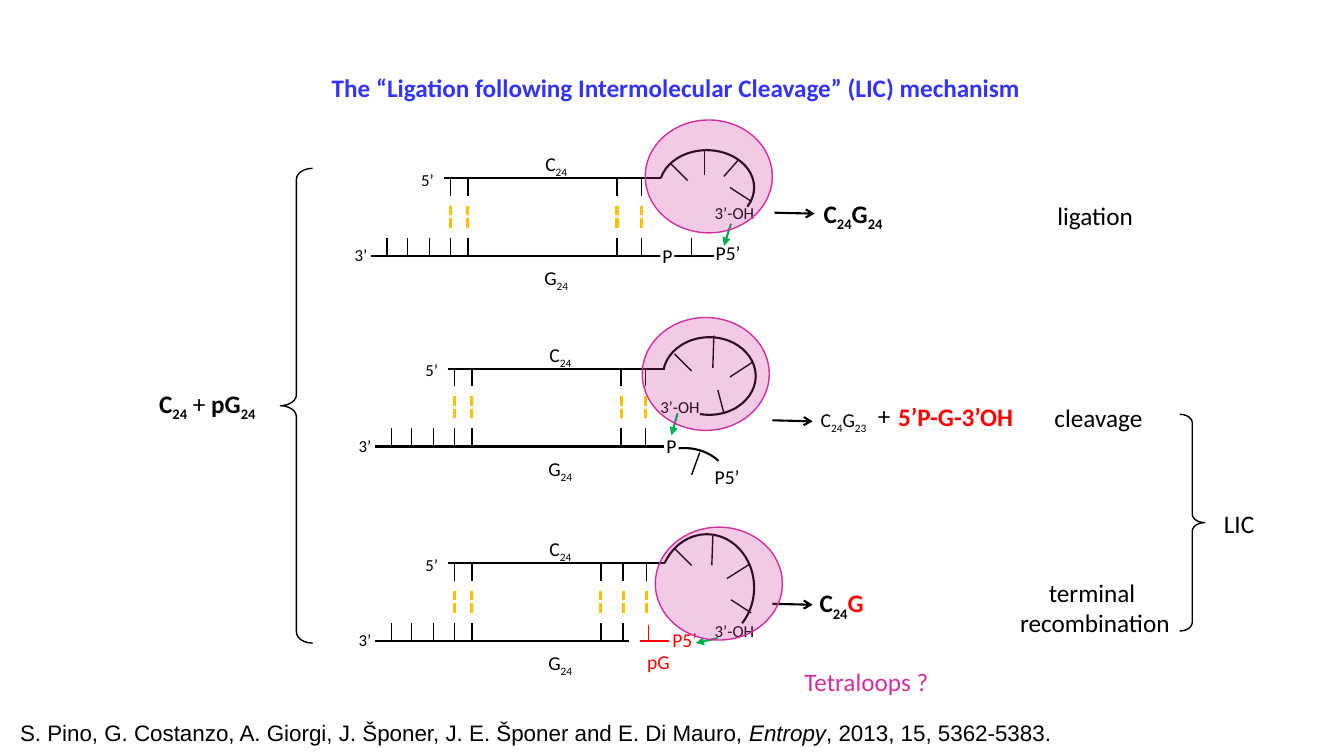
from dataclasses import dataclass

from lxml import etree
from pptx import Presentation
from pptx import util as u
from pptx.dml.color import RGBColor
from pptx.enum import dml, shapes, text
from pptx.oxml.ns import qn

PX = 9144  # one px is a hundredth of an inch


@dataclass(frozen=True)
class Theme:
    black: str = "000000"
    white: str = "FFFFFF"
    blue: str = "3333FF"
    red: str = "FF0000"
    green: str = "00B050"
    amber: str = "FFC000"
    magenta: str = "D12F9F"
    font: str = "Calibri"
    source_font: str = "Arial"
    large: int = 18
    source: int = 16
    medium: int = 14
    small: int = 12
    strand: float = 1.5
    thin: float = 1
    bond: float = 2.25


THEME = Theme()


def rgb(value):
    return RGBColor.from_string(value)


class Sketch:
    def __init__(self, slide, theme):
        self.slide, self.theme = slide, theme

    def set_text(self, box, content, size, color=None, font=None, wrap=False):
        """Content is plain text or (text, flags); b bold, i italic, s subscript, r red."""
        theme = self.theme
        frame = box.text_frame
        frame.word_wrap = wrap
        frame.vertical_anchor = text.MSO_ANCHOR.TOP
        para = frame.paragraphs[0]
        para.alignment = text.PP_ALIGN.LEFT
        if isinstance(content, str):
            para.text = content
            flags = [""] * len(para.runs)
        else:
            for words, _ in content:
                para.add_run().text = words
            flags = [flag for _, flag in content]
        for span, flag in zip(para.runs, flags):
            span.font.name = font or theme.font
            span.font.size = u.Pt(size)
            span.font.bold = "b" in flag
            span.font.italic = "i" in flag
            span.font.color.rgb = rgb(theme.red if "r" in flag else color or theme.black)
            if "s" in flag:
                span.font._element.set("baseline", "-25000")
        return para

    def place(self, box, area):
        box.left, box.top, box.width, box.height = (n * PX for n in area)

    def title(self, area, words):
        box = self.slide.shapes.title
        self.place(box, area)
        self.set_text(box, [(words, "b")], self.theme.large, self.theme.blue)

    def label(self, area, content, size, **style):
        box = self.slide.shapes.add_textbox(*(n * PX for n in area))
        return self.set_text(box, content, size, **style)

    def line(self, x1, y1, x2, y2, color=None, width=None, dashed=False, head=None):
        link = self.slide.shapes.add_connector(
            shapes.MSO_CONNECTOR.STRAIGHT, x1 * PX, y1 * PX, x2 * PX, y2 * PX)
        link.line.color.rgb = rgb(color or self.theme.black)
        link.line.width = u.Pt(width or self.theme.thin)
        if dashed:
            link.line.dash_style = dml.MSO_LINE.SQUARE_DOT
        if head:
            outline = link._element.spPr.find(qn("a:ln"))
            etree.SubElement(outline, qn("a:tailEnd"), type=head)
        etree.SubElement(link._element.spPr, qn("a:effectLst"))

    def shape(self, kind, area, fill=None, line=None, width=1, adjust=(), turn=0, alpha=None):
        item = self.slide.shapes.add_shape(kind, *(n * PX for n in area))
        item.shadow.inherit = False
        item.rotation = turn
        for index, value in enumerate(adjust):
            item.adjustments[index] = value
        if fill:
            item.fill.solid()
            item.fill.fore_color.rgb = rgb(fill)
        else:
            item.fill.background()
        if alpha:
            shade = item._element.spPr.find(qn("a:solidFill"))[0]
            etree.SubElement(shade, qn("a:alpha"), val=str(alpha * 1000))
        if line:
            item.line.color.rgb = rgb(line)
            item.line.width = u.Pt(width)
        else:
            item.line.fill.background()
        return item

    def arc(self, area, start, end):
        self.shape(shapes.MSO_SHAPE.ARC, area, line=self.theme.black,
                   width=self.theme.strand, adjust=(start, end), turn=270)

    def phosphate(self, x, y):
        box = self.shape(shapes.MSO_SHAPE.RECTANGLE, (x, y, 14, 29), fill=self.theme.white)
        frame = box.text_frame
        frame.margin_left = frame.margin_right = 2 * PX
        frame.margin_top, frame.margin_bottom = 0, 5 * PX
        self.set_text(box, "P", self.theme.medium)

    def duplex(self, dx, dy, end, pairs, loose=()):
        """Two facing strands; pairs are the bonded columns at the right."""
        theme = self.theme
        self.label((530 + dx, 259 + dy, 46, 34), [("G", ""), ("24", "s")], theme.medium)
        self.label((531 + dx, 146 + dy, 44, 34), [("C", ""), ("24", "s")], theme.medium)
        self.label((408 + dx, 163 + dy, 33, 30), "5’", theme.small)
        self.label((342 + dx, 238 + dy, 33, 30), "3’", theme.small)
        self.line(440 + dx, 177 + dy, 656 + dx, 177 + dy, width=theme.strand)
        self.line(end, 254 + dy, 368 + dx, 254 + dy, width=theme.strand)
        bonded = [447 + dx, 464 + dx, *pairs]
        for x in bonded + list(loose):
            self.line(x, 177 + dy, x, 194 + dy)
            self.line(x, 204 + dy, x, 228 + dy, theme.amber, theme.bond, dashed=True)
        for x in [384 + dx, 404 + dx, 426 + dx, *bonded]:
            self.line(x, 236 + dy, x, 254 + dy)


# Each row: duplex, then loop arcs, loop ticks, 3’-OH, 5’ end, attack arrow, result arrow, halo
ROWS = [
    dict(duplex=(0, 0, 708, (612, 636)),
         arcs=[((664, 139, 74, 94), 169.05, 69.21)],
         ticks=[(665, 162, 682, 179), (718, 175, 732, 159), (724, 186, 744, 199),
                (699, 148, 699, 174), (686, 236, 686, 253)],
         hydroxyl=(699, 196), phosphate=(655, 242), tip=(700, 234, THEME.black),
         attack=(725, 222, 718, 244), result=(768, 211), halo=(640, 119)),
    dict(duplex=(4, 189, 659, (616, 640)),
         arcs=[((665, 327, 77, 92), 167.28, 116.37), ((640, 437, 77, 92), 210.21, 31.74)],
         ticks=[(669, 351, 686, 368), (724, 374, 747, 359), (712, 387, 718, 410),
                (708, 333, 707, 365), (694, 449, 686, 471)],
         hydroxyl=(645, 389), phosphate=(659, 430), tip=(699, 456, THEME.black),
         attack=(672, 410, 666, 432), result=(766, 417), halo=(637, 315)),
    dict(duplex=(4, 382, 624, (596, 618), (641,)),
         arcs=[((648, 536, 106, 94), 180.3, 81.09)],
         ticks=[(669, 544, 686, 561), (721, 574, 743, 560), (725, 595, 745, 608),
                (707, 532, 706, 561)],
         hydroxyl=(699, 611), phosphate=None, tip=(657, 618, THEME.red),
         attack=(712, 633, 690, 638), result=(766, 599), halo=(650, 523)),
]


def draw_row(sketch, row):
    theme = sketch.theme
    sketch.duplex(*row["duplex"])
    for area, start, end in row["arcs"]:
        sketch.arc(area, start, end)
    for tick in row["ticks"]:
        sketch.line(*tick)
    sketch.label((*row["hydroxyl"], 79, 30), "3’-OH", theme.small, wrap=True)
    if row["phosphate"]:
        sketch.phosphate(*row["phosphate"])
    x, y, color = row["tip"]
    sketch.label((x, y, 46, 34), "P5’", theme.medium, color=color)
    sketch.line(*row["attack"], theme.green, theme.strand, head="triangle")
    x, y = row["result"]
    sketch.line(x, y, x + 40, y + 1, width=theme.strand, head="arrow")
    sketch.shape(shapes.MSO_SHAPE.OVAL, (*row["halo"], 126, 112), fill=theme.magenta,
                 line=theme.magenta, alpha=25)


def main():
    deck = Presentation()
    deck.slide_width, deck.slide_height = 1333 * PX, 750 * PX
    page = deck.slides.add_slide(deck.slide_layouts[5])
    theme = THEME
    sketch = Sketch(page, theme)
    sketch.title((319, 67, 708, 40),
                 "The “Ligation following Intermolecular Cleavage” (LIC) mechanism")

    # Three mechanisms
    for row in ROWS:
        draw_row(sketch, row)

    # Free pG nucleotide
    sketch.line(664, 636, 635, 636, theme.red, theme.strand)
    sketch.line(643, 620, 643, 637, theme.red)
    sketch.label((632, 640, 43, 34), "pG", theme.medium, color=theme.red)

    # Reagents and products
    c24 = [("C", "b"), ("24", "bs")]
    sketch.label((148, 380, 122, 40), [*c24, (" + ", ""), ("pG", "b"), ("24", "bs")], theme.large)
    sketch.label((807, 192, 84, 40), [*c24, ("G", "b"), ("24", "bs")], theme.large)
    sketch.label((804, 400, 70, 34), [("C", ""), ("24", "s"), ("G", ""), ("23", "s")],
                 theme.medium)
    sketch.label((861, 392, 24, 40), "+", theme.large)
    sketch.label((881, 393, 136, 40), [("5’P-G-3’OH", "br")], theme.large)
    sketch.label((803, 578, 67, 40), [*c24, ("G", "br")], theme.large)

    # Names of the reactions
    sketch.label((1039, 194, 96, 40), "ligation", theme.large)
    sketch.label((1036, 394, 108, 40), "cleavage", theme.large)
    names = sketch.label((1001, 568, 170, 71), "terminal \vrecombination", theme.large)
    names.alignment = text.PP_ALIGN.CENTER
    sketch.label((1204, 499, 51, 40), "LIC", theme.large)
    sketch.label((788, 656, 144, 40), "Tetraloops ?", theme.large, color=theme.magenta)

    # Braces
    for kind, area in [(shapes.MSO_SHAPE.LEFT_BRACE, (278, 167, 32, 471)),
                       (shapes.MSO_SHAPE.RIGHT_BRACE, (1170, 411, 25, 215))]:
        sketch.shape(kind, area, line=theme.black, adjust=(0.34, 0.5))

    # Source
    sketch.label((10, 709, 1171, 37), [
        ("S. Pino, G. Costanzo, A. Giorgi, J. Šponer, J. E. Šponer and E. Di Mauro, ", ""),
        ("Entropy", "i"), (", 2013, 15, 5362-5383.", "")],
        theme.source, font=theme.source_font, wrap=True)
    deck.save("out.pptx")


if __name__ == "__main__":
    main()
